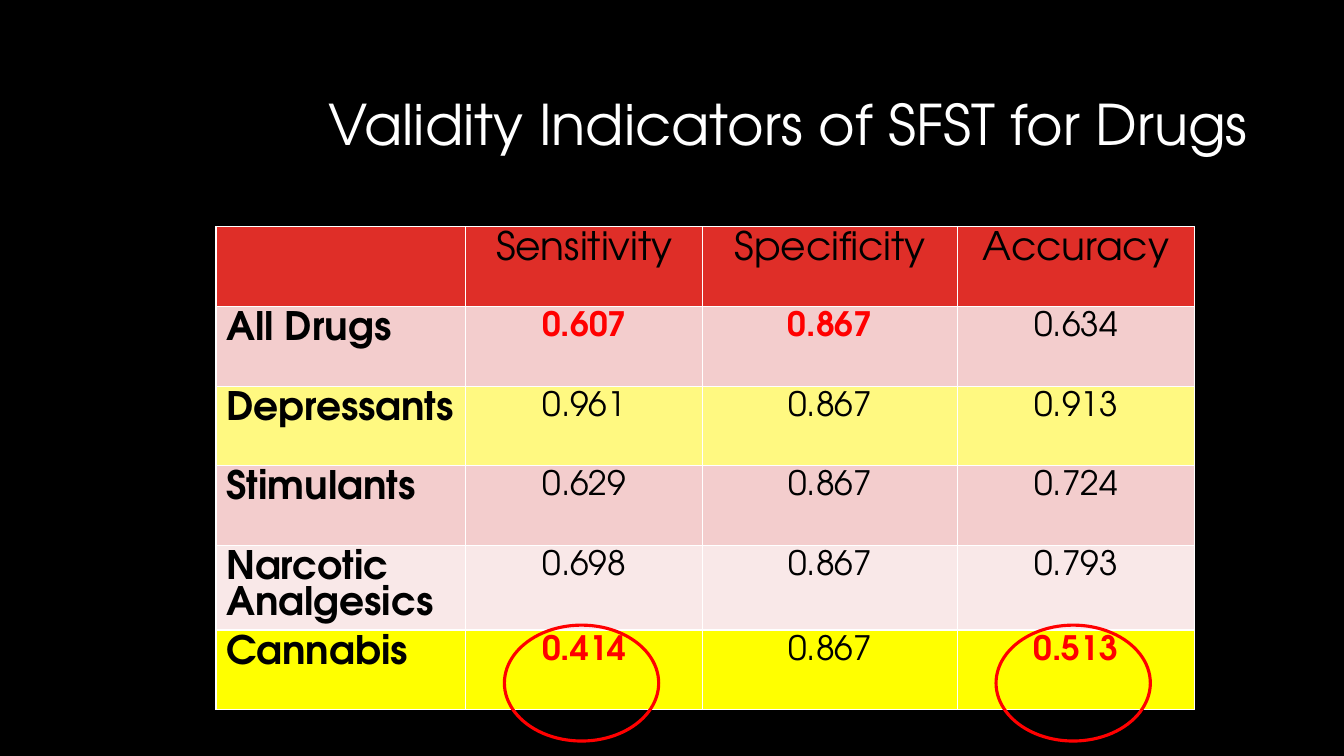
from pptx import Presentation
from pptx.dml.color import RGBColor
from pptx.enum.shapes import MSO_SHAPE
from pptx.enum.text import MSO_ANCHOR, MSO_AUTO_SIZE, PP_ALIGN
from pptx.oxml import parse_xml
from pptx.oxml.ns import nsdecls
from pptx.util import Pt

OVAL = MSO_SHAPE.OVAL
MIDDLE = MSO_ANCHOR.MIDDLE
NO_FIT = MSO_AUTO_SIZE.NONE
LEFT, CENTER, RIGHT = PP_ALIGN.LEFT, PP_ALIGN.CENTER, PP_ALIGN.RIGHT

BLACK = RGBColor(0x00, 0x00, 0x00)
WHITE = RGBColor(0xFF, 0xFF, 0xFF)
RED = RGBColor(0xFF, 0x00, 0x00)
HEADER_RED = RGBColor(0xDF, 0x2E, 0x28)
PINK = RGBColor(0xF3, 0xCD, 0xCD)
PALE_PINK = RGBColor(0xF9, 0xE8, 0xE8)
PALE_YELLOW = RGBColor(0xFF, 0xF9, 0x81)
YELLOW = RGBColor(0xFF, 0xFF, 0x00)
FONT = "TeX Gyre Adventor"

# Content
TITLE = "Validity Indicators of SFST for Drugs"
INDICATORS = [
    ("", "Sensitivity", "Specificity", "Accuracy"),
    ("All Drugs", "0.607", "0.867", "0.634"),
    ("Depressants", "0.961", "0.867", "0.913"),
    ("Stimulants", "0.629", "0.867", "0.724"),
    ("Narcotic Analgesics", "0.698", "0.867", "0.793"),
    ("Cannabis", "0.414", "0.867", "0.513"),
]
ROW_FILLS = [HEADER_RED, PINK, PALE_YELLOW, PINK, PALE_PINK, YELLOW]
HIGHLIGHTS = {(1, 1), (1, 2), (5, 1), (5, 3)}  # (row, column)
CIRCLED = [(5, 1), (5, 3)]

# Layout in points
TABLE_LEFT, TABLE_TOP = 154.3, 162
COLUMN_WIDTHS = [178.5, 169.2, 182, 169.2]
ROW_HEIGHTS = [56.9, 56.9, 56.9, 56.9, 60.5, 56.9]
CIRCLE_WIDTH, CIRCLE_HEIGHT = 110.2, 82.8
CIRCLE_SHIFT, CIRCLE_RISE = -2, 3.6


def style(paragraph, size, color, align, bold=False):
    paragraph.alignment = align
    for run in paragraph.runs:
        run.font.name = FONT
        run.font.size = Pt(size)
        run.font.bold = bold
        run.font.color.rgb = color


def add_borders(cell):
    properties = cell._tc.get_or_add_tcPr()
    for position, side in enumerate(("lnL", "lnR", "lnT", "lnB")):
        properties.insert(position, parse_xml(
            f'<a:{side} {nsdecls("a")} w="{Pt(1)}"><a:solidFill>'
            f'<a:srgbClr val="{WHITE}"/></a:solidFill></a:{side}>'))


def main():
    deck = Presentation()
    deck.slide_width, deck.slide_height = Pt(960), Pt(540)
    slide = deck.slides.add_slide(deck.slide_layouts[5])
    slide.background.fill.solid()
    slide.background.fill.fore_color.rgb = BLACK

    # Title
    title = slide.shapes.title
    title.left, title.top = Pt(220.3), Pt(40.3)
    title.width, title.height = Pt(678.2), Pt(101.5)
    heading = title.text_frame
    heading.text = TITLE
    heading.word_wrap = True
    heading.auto_size = NO_FIT
    heading.vertical_anchor = MIDDLE
    heading.paragraphs[0].line_spacing = 0.9
    style(heading.paragraphs[0], 40, WHITE, RIGHT)

    # Table of indicators
    table = slide.shapes.add_table(
        len(INDICATORS), len(COLUMN_WIDTHS), Pt(TABLE_LEFT), Pt(TABLE_TOP),
        Pt(sum(COLUMN_WIDTHS)), Pt(sum(ROW_HEIGHTS))).table
    table.first_row = table.horz_banding = False
    for column, width in zip(table.columns, COLUMN_WIDTHS):
        column.width = Pt(width)
    for row, height in zip(table.rows, ROW_HEIGHTS):
        row.height = Pt(height)
    for r, values in enumerate(INDICATORS):
        for c, value in enumerate(values):
            cell = table.cell(r, c)
            cell.text = value
            cell.fill.solid()
            cell.fill.fore_color.rgb = ROW_FILLS[r]
            add_borders(cell)
            highlighted = (r, c) in HIGHLIGHTS
            style(cell.text_frame.paragraphs[0],
                  28 if r == 0 or c == 0 else 24,
                  RED if highlighted else BLACK,
                  LEFT if c == 0 else CENTER,
                  bold=c == 0 or highlighted)

    # Circles around the low values
    for r, c in CIRCLED:
        center = TABLE_LEFT + sum(COLUMN_WIDTHS[:c]) + COLUMN_WIDTHS[c] / 2
        top = TABLE_TOP + sum(ROW_HEIGHTS[:r]) - CIRCLE_RISE
        circle = slide.shapes.add_shape(
            OVAL, Pt(center + CIRCLE_SHIFT - CIRCLE_WIDTH / 2), Pt(top),
            Pt(CIRCLE_WIDTH), Pt(CIRCLE_HEIGHT))
        circle.shadow.inherit = False
        circle.fill.background()
        circle.line.color.rgb = RED
        circle.line.width = Pt(2.25)

    deck.save("out.pptx")


if __name__ == "__main__":
    main()
